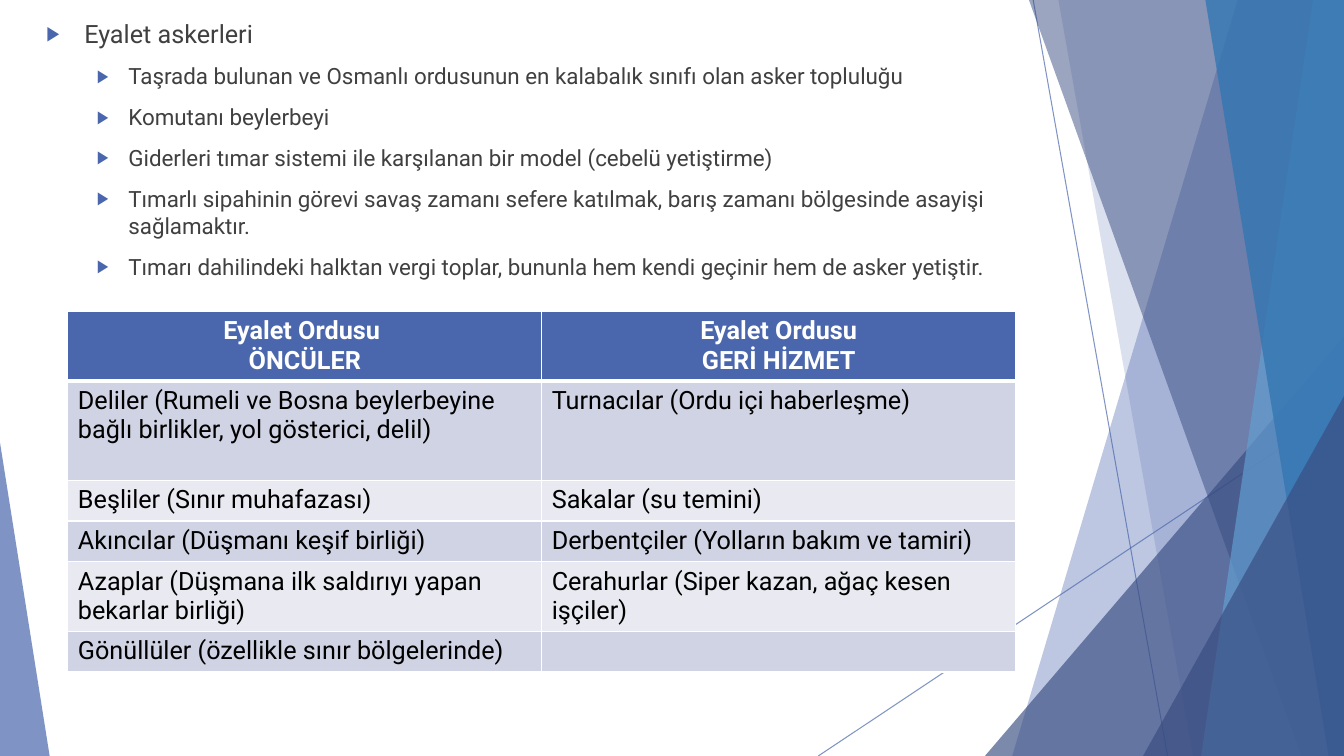
"""Builds the slide on provincial soldiers: bullets, table and faceted backdrop."""
import pptx
import pptx.dml.color
import pptx.enum.shapes
import pptx.enum.text
import pptx.oxml.ns
import pptx.util
from lxml import etree

Pt = pptx.util.Pt
RGBColor = pptx.dml.color.RGBColor
qn = pptx.oxml.ns.qn

BLUE = RGBColor(0x4A, 0x66, 0xAC)
NAVY = RGBColor(0x38, 0x4C, 0x81)
SKY = RGBColor(0x62, 0x9D, 0xD1)
OCEAN = RGBColor(0x34, 0x77, 0xB2)
GREY = RGBColor(0x40, 0x40, 0x40)
BLACK = RGBColor(0, 0, 0)
WHITE = RGBColor(0xFF, 0xFF, 0xFF)
BAND_DARK = RGBColor(0xD0, 0xD3, 0xE3)
BAND_LIGHT = RGBColor(0xE9, 0xEA, 0xF1)
WIDTH, HEIGHT = 960, 540


def set_opacity(shape, percent):
    """Give every colour of the shape the same opacity."""
    for color in shape._element.spPr.iter(qn("a:srgbClr")):
        etree.SubElement(color, qn("a:alpha"), val=str(percent * 1000))


def format_font(font, size, color, bold=False):
    """Apply the deck font with the given size, colour and weight."""
    for name, value in {"name": "Roboto", "size": Pt(size), "bold": bold}.items():
        setattr(font, name, value)
    font.color.rgb = color


deck = pptx.Presentation()
deck.slide_width, deck.slide_height = Pt(WIDTH), Pt(HEIGHT)
page = deck.slides.add_slide(deck.slide_layouts.get_by_name("Title and Content"))
title, body = page.placeholders
title._element.getparent().remove(title._element)

for ends in [(738, 0, 834, 540), (960, 290, 584.5, 540)]:
    line = page.shapes.add_connector(
        pptx.enum.shapes.MSO_CONNECTOR.STRAIGHT, *[Pt(value) for value in ends])
    line.line.color.rgb = BLUE
    line.line.width = Pt(0.75)
    set_opacity(line, 70)
    etree.SubElement(line._element.spPr, qn("a:effectLst"))

# facet: kind, geometry, colour, opacity
facets = [
    ("band", (884, 723), BLUE, 36),
    ("band", (756, 852), BLUE, 20),
    ("triangle", (703.5, 240, 256.5, 1), NAVY, 66),
    ("band", (735, 929.5), NAVY, 50),
    ("band", (938, 858), SKY, 70),
    ("band", (861, 949), OCEAN, 80),
    ("triangle", (816.5, 283, 143.5, 1), NAVY, 66),
    ("triangle", (0, 316, 35.5, 0), BLUE, 70),
]
for kind, geometry, color, opacity in facets:
    if kind == "band":
        top_x, bottom_x = geometry
        outline = page.shapes.build_freeform(Pt(top_x), Pt(0))
        outline.add_line_segments(
            [(Pt(x), Pt(y)) for x, y in
             [(WIDTH, 0), (WIDTH, HEIGHT), (bottom_x, HEIGHT)]], close=True)
        facet = outline.convert_to_shape()
    else:
        left, top, width, apex = geometry
        facet = page.shapes.add_shape(
            pptx.enum.shapes.MSO_SHAPE.ISOSCELES_TRIANGLE,
            Pt(left), Pt(top), Pt(width), Pt(HEIGHT - top))
        facet.adjustments[0] = apex
    facet.shadow.inherit = False
    facet.fill.solid()
    facet.fill.fore_color.rgb = color
    facet.line.fill.background()
    set_opacity(facet, opacity)

bullets = [
    (0, "Eyalet askerleri"),
    (1, "Taşrada bulunan ve Osmanlı ordusunun en kalabalık sınıfı olan asker topluluğu"),
    (1, "Komutanı beylerbeyi"),
    (1, "Giderleri tımar sistemi ile karşılanan bir model (cebelü yetiştirme)"),
    (1, "Tımarlı sipahinin görevi savaş zamanı sefere katılmak, "
        "barış zamanı bölgesinde asayişi sağlamaktır."),
    (1, "Tımarı dahilindeki halktan vergi toplar, "
        "bununla hem kendi geçinir hem de asker yetiştir."),
]
levels = [
    {"size": 18, "margin": 27, "hanging": 27},
    {"size": 16, "margin": 58.5, "hanging": 22.5},
]
page.shapes._spTree.append(body._element)
placement = {"left": 26, "top": 9.5, "width": 715, "height": 484.5}
for name, value in placement.items():
    setattr(body, name, Pt(value))
frame = body.text_frame
frame.word_wrap = True
frame.auto_size = pptx.enum.text.MSO_AUTO_SIZE.NONE
for index, (level, text) in enumerate(bullets):
    para = frame.paragraphs[0] if index == 0 else frame.add_paragraph()
    para.level = level
    para.space_before = Pt(10)
    style = levels[level]
    span = para.add_run()
    span.text = text
    format_font(span.font, style["size"], GREY)
    props = para._p.get_or_add_pPr()
    props.set("marL", str(Pt(style["margin"])))
    props.set("indent", str(-Pt(style["hanging"])))
    bullet_color = etree.SubElement(props, qn("a:buClr"))
    etree.SubElement(bullet_color, qn("a:srgbClr"), val=str(BLUE))
    etree.SubElement(props, qn("a:buSzPct"), val="80000")
    etree.SubElement(props, qn("a:buFont"), typeface="Arial")
    etree.SubElement(props, qn("a:buChar"), char="▶")

rows = [
    (48.5, "Eyalet Ordusu \nÖNCÜLER", "Eyalet Ordusu\nGERİ HİZMET"),
    (71, "Deliler (Rumeli ve Bosna beylerbeyine bağlı birlikler, yol gösterici, delil)",
     "Turnacılar (Ordu içi haberleşme)"),
    (29.2, "Beşliler (Sınır muhafazası)", "Sakalar (su temini)"),
    (29.2, "Akıncılar (Düşmanı keşif birliği)", "Derbentçiler (Yolların bakım ve tamiri)"),
    (49.5, "Azaplar (Düşmana ilk saldırıyı yapan bekarlar birliği)",
     "Cerahurlar (Siper kazan, ağaç kesen işçiler)"),
    (29.2, "Gönüllüler (özellikle sınır bölgelerinde)", ""),
]
table = page.shapes.add_table(
    len(rows), 2, Pt(48.5), Pt(222.5), Pt(677), Pt(sum(row[0] for row in rows))).table
for row_index, (height, *texts) in enumerate(rows):
    table.rows[row_index].height = Pt(height)
    header = row_index == 0
    band = BLUE if header else BAND_DARK if row_index % 2 else BAND_LIGHT
    edges = {"lnL": 1, "lnR": 1, "lnT": 3 if row_index == 1 else 1, "lnB": 3 if header else 1}
    for column, text in enumerate(texts):
        cell = table.cell(row_index, column)
        cell.text = text
        cell.fill.solid()
        cell.fill.fore_color.rgb = band
        for para in cell.text_frame.paragraphs:
            format_font(para.font, 18, WHITE if header else BLACK, header)
            if header:
                para.alignment = pptx.enum.text.PP_ALIGN.CENTER
            for span in para.runs:
                format_font(span.font, 18, WHITE if header else BLACK, header)
        props = cell._tc.get_or_add_tcPr()
        for position, (edge, thickness) in enumerate(edges.items()):
            border = etree.Element(qn("a:" + edge), w=str(Pt(thickness)))
            paint = etree.SubElement(border, qn("a:solidFill"))
            etree.SubElement(paint, qn("a:srgbClr"), val=str(WHITE))
            props.insert(position, border)

deck.save("out.pptx")
